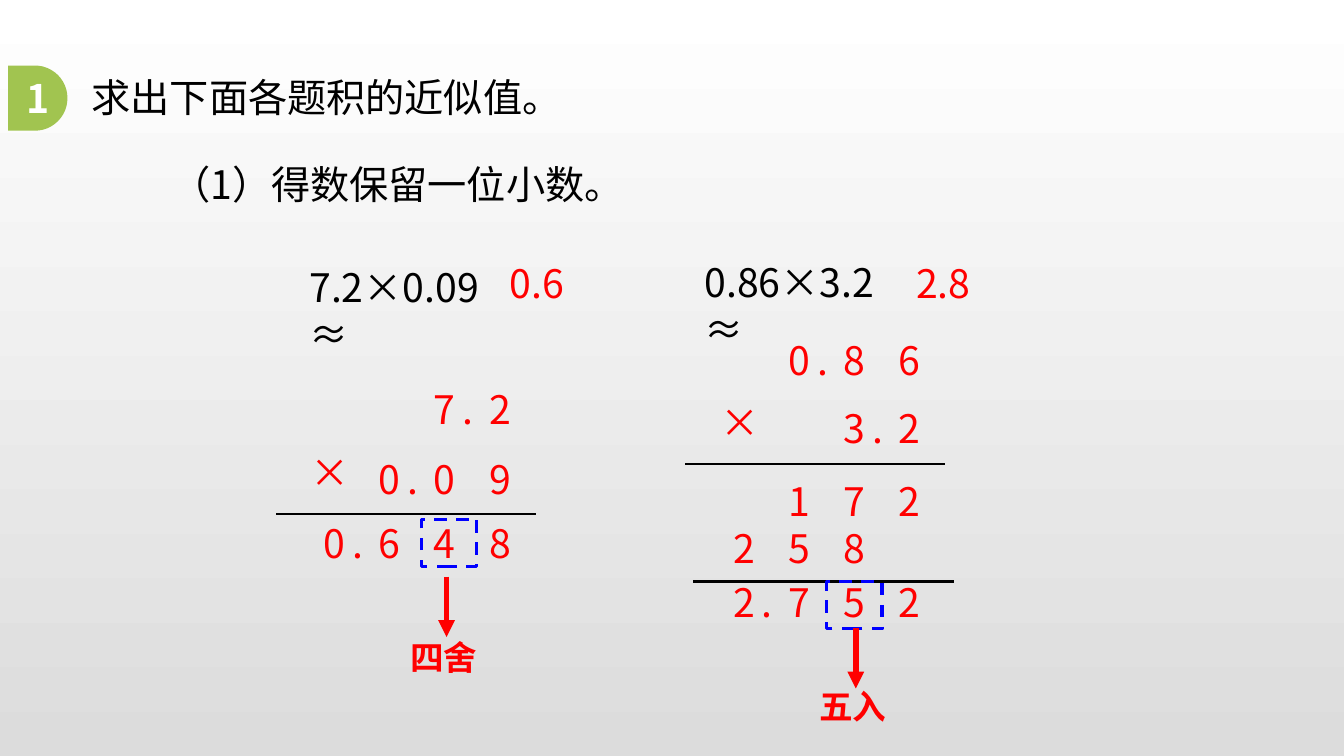
from math import cos, pi, sin

from lxml.etree import SubElement
from pptx import Presentation
from pptx.dml.color import RGBColor
from pptx.enum.dml import MSO_LINE_DASH_STYLE as DASH
from pptx.enum.shapes import MSO_CONNECTOR, MSO_SHAPE
from pptx.enum.text import MSO_ANCHOR, PP_ALIGN
from pptx.oxml.ns import qn
from pptx.util import Inches, Pt

BLACK = RGBColor(0x00, 0x00, 0x00)
WHITE = RGBColor(0xFF, 0xFF, 0xFF)
GREY = RGBColor(0xDC, 0xDC, 0xDC)
RED = RGBColor(0xFF, 0x00, 0x00)
BLUE = RGBColor(0x00, 0x00, 0xFF)
GREEN = RGBColor(0xA1, 0xC4, 0x50)

# The slide is a grid of 40 columns by 22.5 rows.
SLIDE_WIDTH, SLIDE_HEIGHT = Inches(13.33), Inches(7.5)
COLUMN, ROW = SLIDE_WIDTH / 40, SLIDE_HEIGHT / 22.5
TEXT_ROWS = 1.71

DIGIT_WIDTH, DIGIT_PITCH, POINT_OFFSET = 1.62, 1.64, 0.7
LAST_PLACE = 3
RULE_LENGTH, ARROW_LENGTH = 7.74, 1.8

NOTO, ROBOTO = "Noto Sans CJK SC", "Roboto"
BODY = {"name": NOTO, "size": Pt(28), "bold": False}
BADGE = {"name": NOTO, "size": Pt(28), "bold": True}
LABEL = {"name": ROBOTO, "size": Pt(24), "bold": True}

HEADINGS = [
    ("求出下面各题积的近似值。", 2.43, 2.04, 32.4),
    ("（1）得数保留一位小数。", 4.8, 4.62, 27.66),
]

# Numbers are (text, row, places shifted left); positions are (column, row).
PROBLEMS = [
    {
        "equation": ("7.2×0.09≈", 8.91, 7.68, 6.27),
        "answer": ("0.6", 14.88, 7.56, 2.25),
        "left": 9.15,
        "numbers": [("7.2", 11.31, 0), ("0.09", 13.4, 0), ("0.648", 15.3, 0)],
        "times": ("×", 8.94, 13.2, DIGIT_WIDTH),
        "rules": [(8.22, 15.3)],
        "frame": (12.54, 15.45),
        "arrow": (13.29, 17.16),
        "label": ("四舍", 11.91, 18.81, 2.76),
    },
    {
        "equation": ("0.86×3.2≈", 20.67, 7.53, 6.27),
        "answer": ("2.8", 26.97, 7.56, 2.25),
        "left": 21.33,
        "numbers": [("0.86", 9.85, 0), ("3.2", 11.9, 0), ("172", 14.07, 0),
                    ("258", 15.45, 1), ("2.752", 17.07, 0)],
        "times": ("×", 21.15, 11.7, DIGIT_WIDTH),
        "rules": [(20.4, 13.81), (20.64, 17.31)],
        "frame": (24.6, 17.31),
        "arrow": (25.47, 18.69),
        "label": ("五入", 24.09, 20.28, 3.78),
    },
]


def across(columns):
    return round(columns * COLUMN)


def down(rows):
    return round(rows * ROW)


def write(shape, text, color, formats, align):
    paragraph = shape.text_frame.paragraphs[0]
    paragraph.alignment = align
    run = paragraph.add_run()
    run.text = text
    for attribute, value in formats.items():
        setattr(run.font, attribute, value)
    run.font.color.rgb = color
    east_asian = SubElement(run.font._element, qn("a:ea"))
    east_asian.set("typeface", formats["name"])


def add_text(slide, text, left, top, width, color=RED, formats=BODY,
             align=PP_ALIGN.LEFT):
    box = slide.shapes.add_textbox(
        across(left), down(top), across(width), down(TEXT_ROWS))
    box.text_frame.word_wrap = True
    write(box, text, color, formats, align)


def add_number(slide, number, left, top, shift):
    """Set one digit per place, right-aligned; a point follows its digit."""
    digits = sum(character.isdigit() for character in number)
    place = LAST_PLACE - shift - digits
    for character in number:
        if character == ".":
            offset = POINT_OFFSET
        else:
            place += 1
            offset = 0
        add_text(slide, character, left + place * DIGIT_PITCH + offset, top,
                 DIGIT_WIDTH, align=PP_ALIGN.CENTER)


def add_line(slide, start, end, color, width):
    line = slide.shapes.add_connector(
        MSO_CONNECTOR.STRAIGHT, across(start[0]), down(start[1]),
        across(end[0]), down(end[1]))
    line.line.color.rgb = color
    line.line.width = Pt(width)
    SubElement(line._element.spPr, qn("a:effectLst"))
    return line


def add_arrow(slide, left, top):
    arrow = add_line(slide, (left, top), (left, top + ARROW_LENGTH), RED, 4)
    head = SubElement(arrow.line._get_or_add_ln(), qn("a:tailEnd"))
    head.set("type", "triangle")


def add_frame(slide, left, top):
    """Mark the digit that decides the rounding."""
    frame = slide.shapes.add_shape(
        MSO_SHAPE.RECTANGLE, across(left), down(top), across(1.65), down(1.41))
    frame.shadow.inherit = False
    frame.fill.background()
    frame.line.color.rgb = BLUE
    frame.line.width = Pt(2.25)
    frame.line.dash_style = DASH.DASH


def add_badge(slide, text, left, top, straight, radius, steps=24):
    """Draw a tab whose right end is a half circle."""
    angles = [pi * step / steps - pi / 2 for step in range(steps + 1)]
    arc = [(across(left + straight + radius * cos(angle)),
            down(top + radius + radius * sin(angle))) for angle in angles]
    builder = slide.shapes.build_freeform(across(left), down(top))
    builder.add_line_segments(
        arc + [(across(left), down(top + 2 * radius))], close=True)
    badge = builder.convert_to_shape()
    badge.shadow.inherit = False
    badge.fill.solid()
    badge.fill.fore_color.rgb = GREEN
    badge.line.fill.background()
    badge.text_frame.vertical_anchor = MSO_ANCHOR.MIDDLE
    write(badge, text, WHITE, BADGE, PP_ALIGN.CENTER)


def add_problem(slide, problem):
    add_text(slide, *problem["equation"], color=BLACK)
    add_text(slide, *problem["answer"])
    for number, top, shift in problem["numbers"]:
        add_number(slide, number, problem["left"], top, shift)
    add_text(slide, *problem["times"], align=PP_ALIGN.CENTER)
    for left, top in problem["rules"]:
        add_line(slide, (left, top), (left + RULE_LENGTH, top), BLACK, 2)
    add_frame(slide, *problem["frame"])
    add_arrow(slide, *problem["arrow"])
    add_text(slide, *problem["label"], formats=LABEL)


def paint_background(slide):
    fill = slide.background.fill
    fill.gradient()
    fill.gradient_angle = 270
    for stop, color in zip(fill.gradient_stops, (WHITE, GREY)):
        stop.color.rgb = color


def main():
    presentation = Presentation()
    presentation.slide_width = SLIDE_WIDTH
    presentation.slide_height = SLIDE_HEIGHT
    slide = presentation.slides.add_slide(presentation.slide_layouts[6])
    paint_background(slide)
    for heading in HEADINGS:
        add_text(slide, *heading, color=BLACK)
    add_badge(slide, "1", left=0.24, top=1.95, straight=0.8, radius=0.97)
    for problem in PROBLEMS:
        add_problem(slide, problem)
    presentation.save("out.pptx")


if __name__ == "__main__":
    main()
